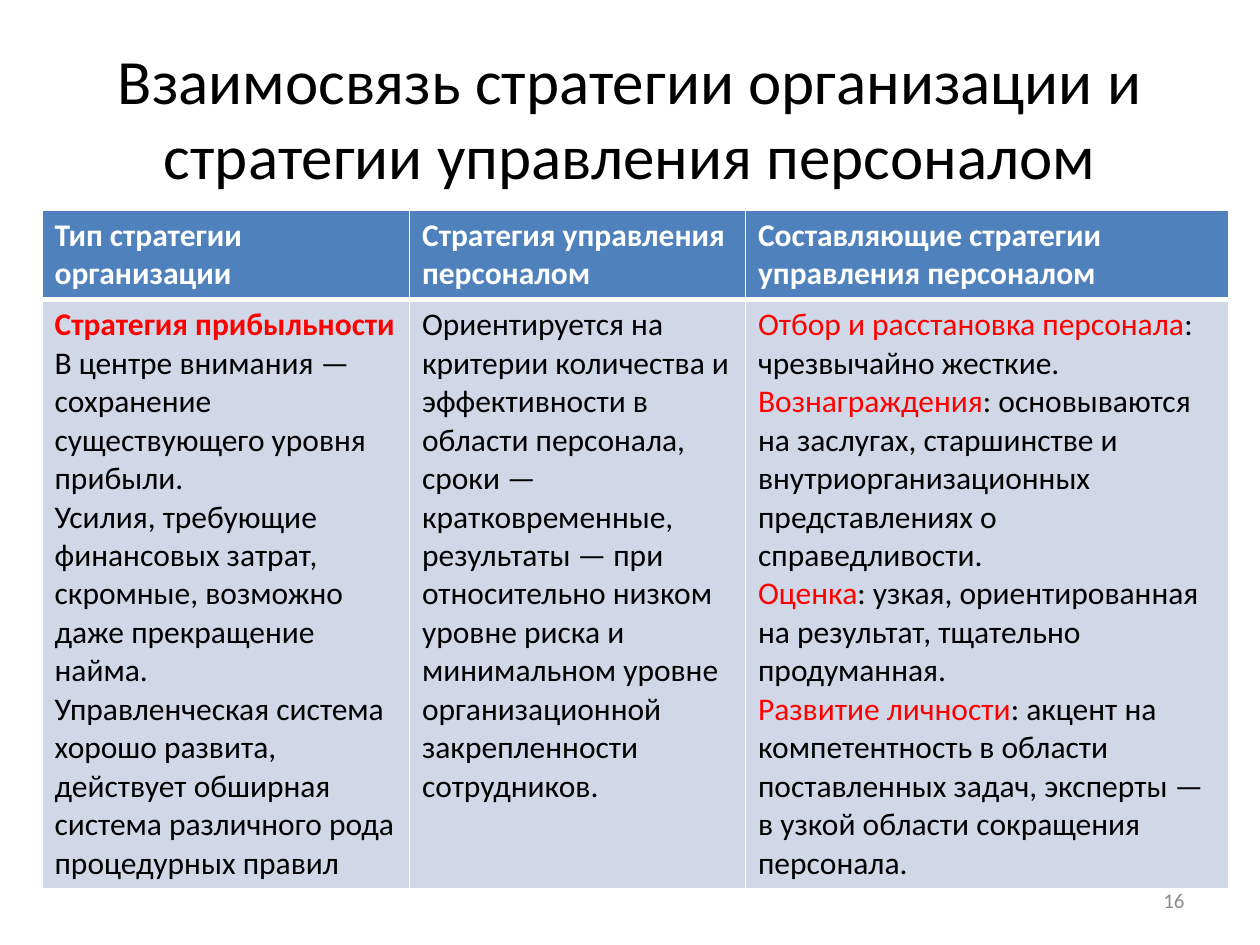
from dataclasses import dataclass

from lxml import etree
from pptx import Presentation
from pptx.dml.color import RGBColor
from pptx.enum.text import MSO_ANCHOR, PP_ALIGN
from pptx.oxml.ns import qn
from pptx.util import Emu, Pt

CENTER, RIGHT = PP_ALIGN.CENTER, PP_ALIGN.RIGHT
MIDDLE = MSO_ANCHOR.MIDDLE
EMU_PER_PX = 9525
FONT = "Calibri"
TABLE_SIZE = 18
THIN, THICK = 1, 3
COLORS = {
    "black": "000000",
    "white": "FFFFFF",
    "red": "FF0000",
    "gray": "8C8C8C",
    "header": "4F81BD",
    "body": "D0D8E8",
}


@dataclass(frozen=True)
class Span:
    text: str
    color: str = "black"
    bold: bool = False


@dataclass(frozen=True)
class Label:
    text: str
    left: int
    top: int
    width: int
    height: int
    size: int
    color: str
    align: PP_ALIGN


LABELS = [
    Label("Взаимосвязь стратегии организации и стратегии управления персоналом",
          48, 29, 864, 120, 36, "black", CENTER),
    Label("16", 688, 667, 224, 38, 12, "gray", RIGHT),
]

TABLE_LEFT, TABLE_TOP = 32, 160
COLUMN_WIDTHS = [280, 256, 368]
ROW_HEIGHTS = [68, 441]

HEADERS = [
    "Тип стратегии организации",
    "Стратегия управления персоналом",
    "Составляющие стратегии управления персоналом",
]
PROFIT_STRATEGY = [
    "В центре внимания — сохранение существующего уровня прибыли.",
    "Усилия, требующие финансовых затрат, скромные, возможно даже прекращение найма.",
    "Управленческая система хорошо развита, действует обширная система "
    "различного рода процедурных правил",
]
STAFF_STRATEGY = (
    "Ориентируется на критерии количества и эффективности в области персонала, "
    "сроки — кратковременные, результаты — при относительно низком уровне риска "
    "и минимальном уровне организационной закрепленности сотрудников."
)
COMPONENTS = {
    "Отбор и расстановка персонала": ": чрезвычайно жесткие.",
    "Вознаграждения": ": основываются на заслугах, старшинстве и "
                      "внутриорганизационных представлениях о справедливости.",
    "Оценка": ": узкая, ориентированная на результат, тщательно продуманная.",
    "Развитие личности": ": акцент на компетентность в области поставленных задач, "
                         "эксперты — в узкой области сокращения персонала.",
}
ROWS = [
    [[[Span(text, "white", True)]] for text in HEADERS],
    [
        [[Span("Стратегия прибыльности", "red", True)]]
        + [[Span(text)] for text in PROFIT_STRATEGY],
        [[Span(STAFF_STRATEGY)]],
        [[Span(name, "red"), Span(detail)] for name, detail in COMPONENTS.items()],
    ],
]


def px(value: int) -> Emu:
    return Emu(value * EMU_PER_PX)


def rgb(name: str) -> RGBColor:
    return RGBColor.from_string(COLORS[name])


def format_font(font, size: int, color: str, bold: bool = False) -> None:
    font.name = FONT
    font.size = Pt(size)
    font.bold = bold
    font.color.rgb = rgb(color)


def draw_label(page, label: Label) -> None:
    box = page.shapes.add_textbox(
        px(label.left), px(label.top), px(label.width), px(label.height))
    frame = box.text_frame
    frame.word_wrap = True
    frame.vertical_anchor = MIDDLE
    frame.text = label.text
    para = frame.paragraphs[0]
    para.alignment = label.align
    format_font(para.runs[0].font, label.size, label.color)


def set_borders(cell, top: int, bottom: int) -> None:
    properties = cell._tc.get_or_add_tcPr()
    for side, width in (("L", THIN), ("R", THIN), ("T", top), ("B", bottom)):
        line = etree.SubElement(properties, qn(f"a:ln{side}"), w=str(Pt(width)))
        fill = etree.SubElement(line, qn("a:solidFill"))
        etree.SubElement(fill, qn("a:srgbClr"), val=COLORS["white"])


def write_cell(cell, paragraphs: list[list[Span]]) -> None:
    frame = cell.text_frame
    frame.text = "\n".join("" for _ in paragraphs)
    for para, spans in zip(frame.paragraphs, paragraphs):
        for span in spans:
            run = para.add_run()
            run.text = span.text
            format_font(run.font, TABLE_SIZE, span.color, span.bold)


def draw_table(page) -> None:
    table = page.shapes.add_table(
        len(ROW_HEIGHTS), len(COLUMN_WIDTHS), px(TABLE_LEFT), px(TABLE_TOP),
        px(sum(COLUMN_WIDTHS)), px(sum(ROW_HEIGHTS))).table
    table.horz_banding = False
    for column, width in zip(table.columns, COLUMN_WIDTHS):
        column.width = px(width)
    for row, height in zip(table.rows, ROW_HEIGHTS):
        row.height = px(height)
    row_styles = [("header", THIN, THICK), ("body", THICK, THIN)]
    for row, contents, (fill, top, bottom) in zip(table.rows, ROWS, row_styles):
        for cell, paragraphs in zip(row.cells, contents):
            set_borders(cell, top, bottom)
            cell.fill.solid()
            cell.fill.fore_color.rgb = rgb(fill)
            write_cell(cell, paragraphs)


def main() -> None:
    deck = Presentation()
    deck.slide_width, deck.slide_height = px(960), px(720)
    page = deck.slides.add_slide(deck.slide_layouts[6])
    draw_table(page)
    for label in LABELS:
        draw_label(page, label)
    deck.save("out.pptx")


if __name__ == "__main__":
    main()
